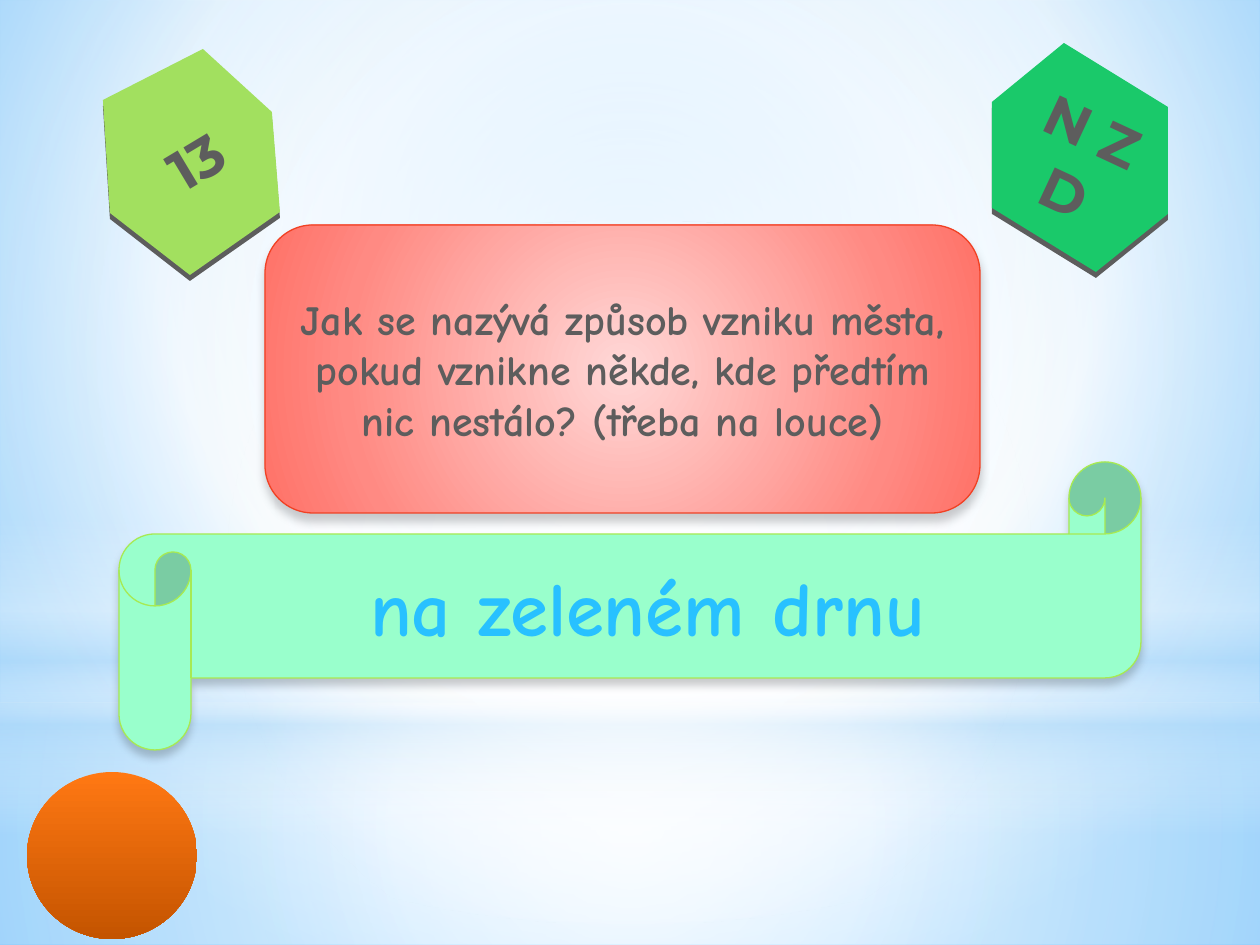
from dataclasses import dataclass
from typing import Optional, Union

from lxml import etree
from pptx import Presentation, util as u
from pptx.dml.color import RGBColor
from pptx.enum import shapes, text
from pptx.oxml import parse_xml
from pptx.oxml.ns import nsdecls, qn

SCALE = 914400 / 126


def px(length: float) -> u.Emu:
    return u.Emu(round(length * SCALE))


@dataclass(frozen=True)
class Stop:
    position: int
    color: str
    alpha: int = 100


@dataclass(frozen=True)
class Gradient:
    stops: tuple[Stop, ...]
    center: Optional[tuple[int, int, int, int]] = (50, 50, 50, 50)


@dataclass(frozen=True)
class Theme:
    hand_font: str = "Comic Neue"
    badge_font: str = "Montserrat"
    badge_size: int = 32
    question_size: int = 24
    answer_size: int = 44
    ink: str = "5D5D5D"
    answer: str = "28C1FF"
    red: str = "F14124"
    lime: str = "A7EA52"
    mint: str = "99FFCC"
    green_face: str = "1AC96A"
    lime_face: str = "A2E05F"
    backdrop: Gradient = Gradient(
        (Stop(0, "9ED5FF"), Stop(60, "FFFFFF"), Stop(100, "5BB9FF")), (20, 10, 20, 60))
    floor: Gradient = Gradient(
        (Stop(0, "FFFFFF", 91), Stop(37, "FFFFFF", 76), Stop(100, "B4DCFA", 79)))
    sky: Gradient = Gradient(
        (Stop(0, "FFFFFF", 89), Stop(48, "FFFFFF", 62), Stop(100, "B4DCFA", 79)))
    horizon: Gradient = Gradient(
        (Stop(0, "FFFFFF", 0), Stop(29, "FFFFFF", 30), Stop(45, "B4DCFA", 40),
         Stop(55, "FFFFFF", 26), Stop(65, "B4DCFA", 60), Stop(100, "FFFFFF", 0)), None)
    glow: Gradient = Gradient((Stop(0, "FFFFFF"), Stop(56, "FFFFFF", 0)))
    card: Gradient = Gradient(
        (Stop(0, "FFD8D7"), Stop(72, "FF8A83"), Stop(100, "FF7167")))
    ball: Gradient = Gradient((Stop(0, "FF7813"), Stop(100, "C45400")), None)


THEME = Theme()


@dataclass(frozen=True)
class Label:
    wording: str
    font: str
    size: int
    color: str


@dataclass(frozen=True)
class Panel:
    kind: shapes.MSO_SHAPE
    box: tuple[int, int, int, int]
    fill: Union[str, Gradient]
    line: Optional[str] = None
    label: Optional[Label] = None
    adjustment: Optional[float] = None


@dataclass(frozen=True)
class Badge:
    corners: tuple[tuple[int, int], ...]
    face: str
    label: Label
    text_box: tuple[int, int, int, int]
    rotation: int


def paint_gradient(properties: etree._Element, gradient: Gradient) -> None:
    stops = "".join(
        f'<a:gs pos="{stop.position * 1000}"><a:srgbClr val="{stop.color}">'
        f'<a:alpha val="{stop.alpha * 1000}"/></a:srgbClr></a:gs>'
        for stop in gradient.stops)
    if gradient.center:
        sides = " ".join(f'{side}="{value * 1000}"'
                         for side, value in zip("ltrb", gradient.center))
        direction = f'<a:path path="circle"><a:fillToRect {sides}/></a:path>'
    else:
        direction = '<a:lin ang="5400000" scaled="0"/>'
    fill = parse_xml(f'<a:gradFill {nsdecls("a")} rotWithShape="1">'
                     f'<a:gsLst>{stops}</a:gsLst>{direction}</a:gradFill>')
    properties.replace(properties.find(qn("a:noFill")), fill)


def add_soft_shadow(shape) -> None:
    effects = shape.element.spPr.find(qn("a:effectLst"))
    effects.append(parse_xml(
        f'<a:outerShdw {nsdecls("a")} blurRad="63500" dist="50800" dir="5400000" '
        'rotWithShape="0"><a:srgbClr val="000000"><a:alpha val="20000"/>'
        '</a:srgbClr></a:outerShdw>'))


def write_label(shape, label: Label) -> None:
    frame = shape.text_frame
    frame.text = label.wording
    frame.word_wrap = True
    frame.vertical_anchor = text.MSO_ANCHOR.MIDDLE
    paragraph = frame.paragraphs[0]
    paragraph.alignment = text.PP_ALIGN.CENTER
    font = paragraph.runs[0].font
    font.name = label.font
    font.size = u.Pt(label.size)
    font.bold = True
    font.color.rgb = RGBColor.from_string(label.color)


def draw_panel(slide, panel: Panel) -> None:
    shape = slide.shapes.add_shape(panel.kind, *map(px, panel.box))
    shape.shadow.inherit = False
    if panel.adjustment is not None:
        shape.adjustments[0] = panel.adjustment
    if isinstance(panel.fill, Gradient):
        shape.fill.background()
        paint_gradient(shape.element.spPr, panel.fill)
    else:
        shape.fill.solid()
        shape.fill.fore_color.rgb = RGBColor.from_string(panel.fill)
    if panel.line:
        shape.line.color.rgb = RGBColor.from_string(panel.line)
        shape.line.width = u.Pt(0.75)
        add_soft_shadow(shape)
    else:
        shape.line.fill.background()
    if panel.label:
        write_label(shape, panel.label)


def draw_badge(slide, badge: Badge) -> None:
    for drop, color in ((6, THEME.ink), (0, badge.face)):
        points = [(x, y + drop) for x, y in badge.corners]
        builder = slide.shapes.build_freeform(*points[0], scale=SCALE)
        builder.add_line_segments(points[1:], close=True)
        shape = builder.convert_to_shape()
        shape.shadow.inherit = False
        shape.fill.solid()
        shape.fill.fore_color.rgb = RGBColor.from_string(color)
        shape.line.fill.background()
    caption = slide.shapes.add_textbox(*map(px, badge.text_box))
    caption.rotation = badge.rotation
    frame = caption.text_frame
    frame.margin_left = frame.margin_right = frame.margin_top = frame.margin_bottom = 0
    write_label(caption, badge.label)


KIND = shapes.MSO_SHAPE
SCENERY = (
    Panel(KIND.RECTANGLE, (0, 703, 1260, 242), THEME.floor),
    Panel(KIND.RECTANGLE, (0, 0, 1260, 703), THEME.sky),
    Panel(KIND.RECTANGLE, (0, 519, 1260, 315), THEME.horizon),
    Panel(KIND.OVAL, (0, 221, 1260, 703), THEME.glow),
)
BADGES = (
    Badge(((1064, 43), (1168, 107), (1168, 214), (1096, 272), (992, 208), (992, 102)),
          THEME.green_face, Label("N Z D", THEME.badge_font, THEME.badge_size, THEME.ink),
          (1014, 91, 130, 140), 25),
    Badge(((203, 49), (272, 112), (280, 212), (190, 275), (110, 213), (103, 100)),
          THEME.lime_face, Label("13", THEME.badge_font, THEME.badge_size, THEME.ink),
          (131, 90, 130, 140), -31),
)
CONTENT = (
    Panel(KIND.ROUNDED_RECTANGLE, (265, 225, 715, 288), THEME.card, THEME.red,
          Label("Jak se nazývá způsob vzniku města, pokud vznikne někde, "
                "kde předtím nic nestálo? (třeba na louce)",
                THEME.hand_font, THEME.question_size, THEME.ink)),
    Panel(KIND.OVAL, (27, 772, 170, 167), THEME.ball),
    Panel(KIND.HORIZONTAL_SCROLL, (119, 462, 1022, 288), THEME.mint, THEME.lime,
          Label("na zeleném drnu", THEME.hand_font, THEME.answer_size, THEME.answer),
          0.25),
)


def main() -> None:
    presentation = Presentation()
    presentation.slide_width, presentation.slide_height = px(1260), px(945)
    slide = presentation.slides.add_slide(presentation.slide_layouts[6])
    slide.background.fill.background()
    paint_gradient(slide.element.find(".//" + qn("p:bgPr")), THEME.backdrop)
    for panel in SCENERY:
        draw_panel(slide, panel)
    for badge in BADGES:
        draw_badge(slide, badge)
    for panel in CONTENT:
        draw_panel(slide, panel)
    presentation.save("out.pptx")


if __name__ == "__main__":
    main()
